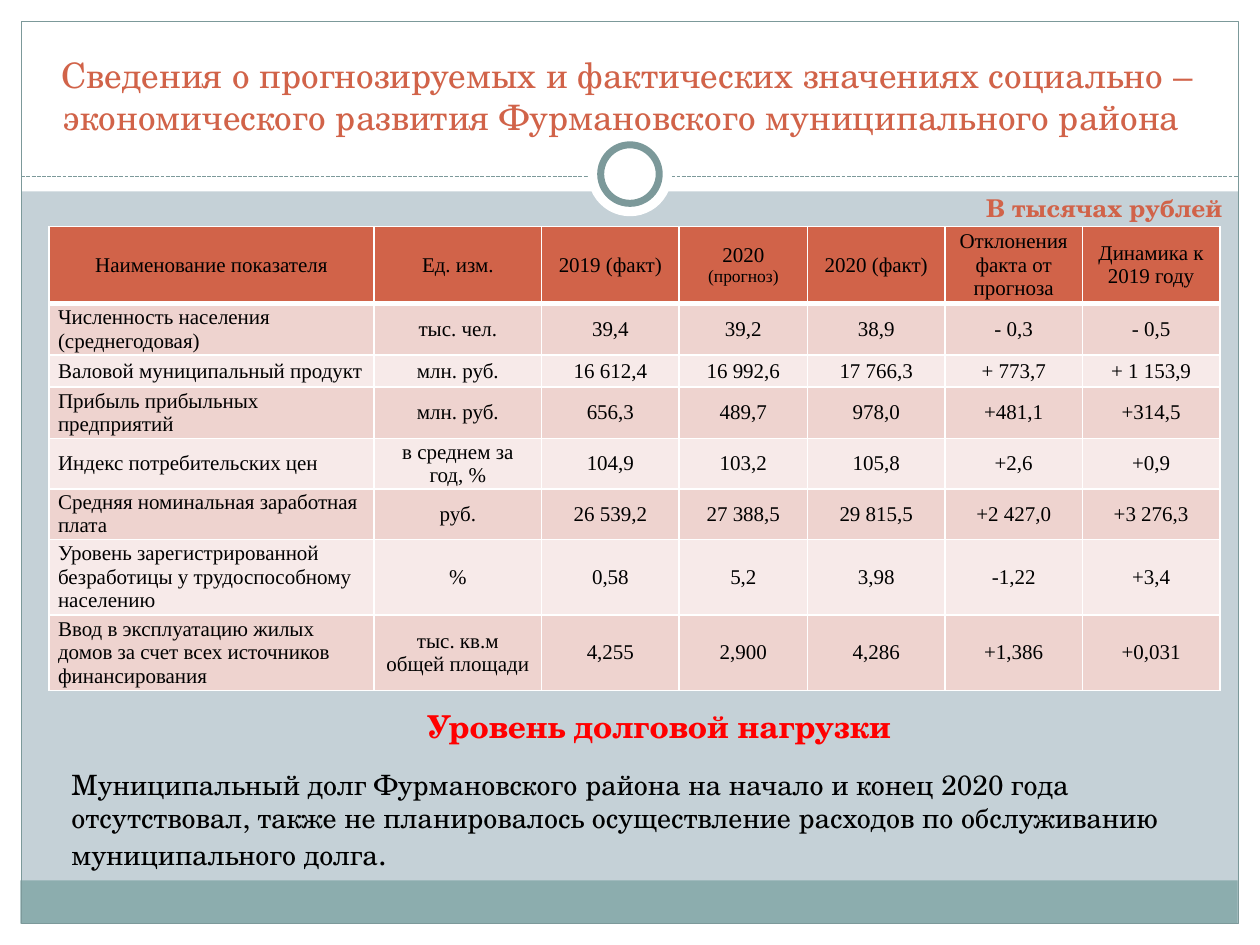
from lxml import etree
from pptx import Presentation
from pptx.dml.color import RGBColor
from pptx.enum.dml import MSO_LINE
from pptx.enum.shapes import MSO_CONNECTOR, MSO_SHAPE
from pptx.enum.text import MSO_ANCHOR, MSO_AUTO_SIZE, PP_ALIGN
from pptx.oxml import parse_xml
from pptx.oxml.ns import qn
from pptx.util import Cm, Pt

RECT, OVAL = MSO_SHAPE.RECTANGLE, MSO_SHAPE.OVAL
LEFT, MID = PP_ALIGN.LEFT, PP_ALIGN.CENTER
NS = "http://schemas.openxmlformats.org/drawingml/2006/main"
SERIF, SCHOOL = "Times New Roman", "TeX Gyre Schola"
HEX = {
    "back": "C5D1D7", "white": "FFFFFF", "band": "8CADAE", "edge": "7C999A",
    "rust": "D16349", "odd": "EED3CF", "even": "F7EAE9", "red": "FF0000",
    "black": "000000",
}
INK = {name: RGBColor.from_string(code) for name, code in HEX.items()}

deck = Presentation()
deck.slide_width, deck.slide_height = Cm(25.4), Cm(19.05)
slide = deck.slides.add_slide(deck.slide_layouts[6])
slide.background.fill.solid()
slide.background.fill.fore_color.rgb = INK["back"]


def draw(kind, x, y, w, h, fill=None, width=0):
    shape = slide.shapes.add_shape(kind, Cm(x), Cm(y), Cm(w), Cm(h))
    shape.shadow.inherit = False
    if fill:
        shape.fill.solid()
        shape.fill.fore_color.rgb = INK[fill]
    else:
        shape.fill.background()
    if width:
        shape.line.color.rgb = INK["edge"]
        shape.line.width = Pt(width)
    else:
        shape.line.fill.background()


def style(par, text, size, color, face=SCHOOL, bold=False, align=LEFT):
    par.text = text
    par.alignment = align
    par.font.size, par.font.name, par.font.bold = Pt(size), face, bold
    par.font.color.rgb = INK[color]


draw(RECT, 0, 18.62, 25.4, 0.43, "white")
draw(RECT, 0, 0, 25.4, 3.86, "white")
for x in (0, 24.97):
    draw(RECT, x, 0, 0.43, 19.05, "white")
draw(RECT, 0.41, 17.75, 24.54, 0.87, "band")
draw(RECT, 0.43, 0.43, 24.54, 18.19, width=0.75)

rule = slide.shapes.add_connector(
    MSO_CONNECTOR.STRAIGHT, Cm(0.43), Cm(3.56), Cm(24.97), Cm(3.56))
rule.line.color.rgb = INK["edge"]
rule.line.width = Pt(0.75)
rule.line.dash_style = MSO_LINE.SQUARE_DOT
etree.SubElement(rule.element.spPr, qn("a:effectLst"))

draw(OVAL, 11.85, 2.66, 1.7, 1.7, "white")
draw(OVAL, 12.11, 2.92, 1.18, 1.18, "white", 4)

title = slide.shapes.add_textbox(Cm(0.79), Cm(0.79), Cm(23.7), Cm(2.1)).text_frame
title.word_wrap = True
title.vertical_anchor = MSO_ANCHOR.BOTTOM
style(title.paragraphs[0],
      "Сведения о прогнозируемых и фактических значениях социально – "
      "экономического развития Фурмановского муниципального района ",
      20, "rust", align=MID)

rows = [
    ["Наименование показателя", "Ед. изм.", "2019 (факт)", "2020 ", "2020 (факт)",
     "Отклонения факта от прогноза", "Динамика к 2019 году"],
    ["Численность населения (среднегодовая)", "тыс. чел.",
     "39,4", "39,2", "38,9", "- 0,3", "- 0,5"],
    ["Валовой муниципальный продукт", "млн. руб.",
     "16 612,4", "16 992,6", "17 766,3", "+ 773,7", "+ 1 153,9"],
    ["Прибыль прибыльных предприятий", "млн. руб.",
     "656,3", "489,7", "978,0", "+481,1", "+314,5"],
    ["Индекс потребительских цен", "в среднем за год, %",
     "104,9", "103,2", "105,8", "+2,6", "+0,9"],
    ["Средняя номинальная заработная плата", "руб.",
     "26 539,2", "27 388,5", "29 815,5", "+2 427,0", "+3 276,3"],
    ["Уровень зарегистрированной безработицы у трудоспособному населению", "%",
     "0,58", "5,2", "3,98", "-1,22", "+3,4"],
    ["Ввод в эксплуатацию жилых домов за счет всех источников финансирования",
     "тыс. кв.м\nобщей площади", "4,255", "2,900", "4,286", "+1,386", "+0,031"],
]
wide = [6.55, 3.38, 2.77, 2.59, 2.77, 2.77, 2.77]
high = [1.55, 1.04, 0.64, 1.04, 0.76, 0.79, 0.79, 0.79]
grid = slide.shapes.add_table(
    len(rows), len(wide), Cm(0.99), Cm(4.57), Cm(sum(wide)), Cm(sum(high))).table
for col, size in zip(grid.columns, wide):
    col.width = Cm(size)
for row, size in zip(grid.rows, high):
    row.height = Cm(size)

for i, row in enumerate(rows):
    for j, text in enumerate(row):
        cell = grid.cell(i, j)
        cell.margin_left = cell.margin_right = Cm(0.18)
        cell.margin_top = cell.margin_bottom = 0
        cell.vertical_anchor = MSO_ANCHOR.MIDDLE
        cell.fill.solid()
        cell.fill.fore_color.rgb = INK["rust" if i == 0 else "odd" if i % 2 else "even"]
        cell.text = text
        for par in cell.text_frame.paragraphs:
            style(par, par.text, 12, "black", SERIF,
                  align=LEFT if i and j == 0 else MID)
        props = cell._tc.get_or_add_tcPr()
        for k, side in enumerate("LRTB"):
            thick = 3 if (i, side) in ((0, "B"), (1, "T")) else 1
            props.insert(k, parse_xml(
                f'<a:ln{side} xmlns:a="{NS}" w="{Pt(thick)}"><a:solidFill>'
                f'<a:srgbClr val="{HEX["white"]}"/></a:solidFill></a:ln{side}>'))

plan = grid.cell(0, 3).text_frame.paragraphs[0].add_run()
plan.text = "(прогноз)"
plan.font.size = Pt(10)

debt = slide.shapes.add_textbox(Cm(1.19), Cm(14.12), Cm(24.2), Cm(3.76)).text_frame
debt.word_wrap = True
debt.auto_size = MSO_AUTO_SIZE.SHAPE_TO_FIT_TEXT
style(debt.paragraphs[0], "Уровень долговой нагрузки", 18, "red", bold=True, align=MID)
body = debt.add_paragraph()
style(body,
      "Муниципальный долг Фурмановского района на начало и конец 2020 года "
      "отсутствовал, также не планировалось осуществление расходов по "
      "обслуживанию муниципального долга", 16, "black")
body.space_before = Pt(13)
stop = body.add_run()
stop.text = "."
stop.font.size = Pt(18)

unit = slide.shapes.add_textbox(Cm(19.63), Cm(3.76), Cm(5.77), Cm(1.19)).text_frame
unit.word_wrap = True
style(unit.paragraphs[0], "В тысячах рублей", 14, "rust", bold=True)

deck.save("out.pptx")
